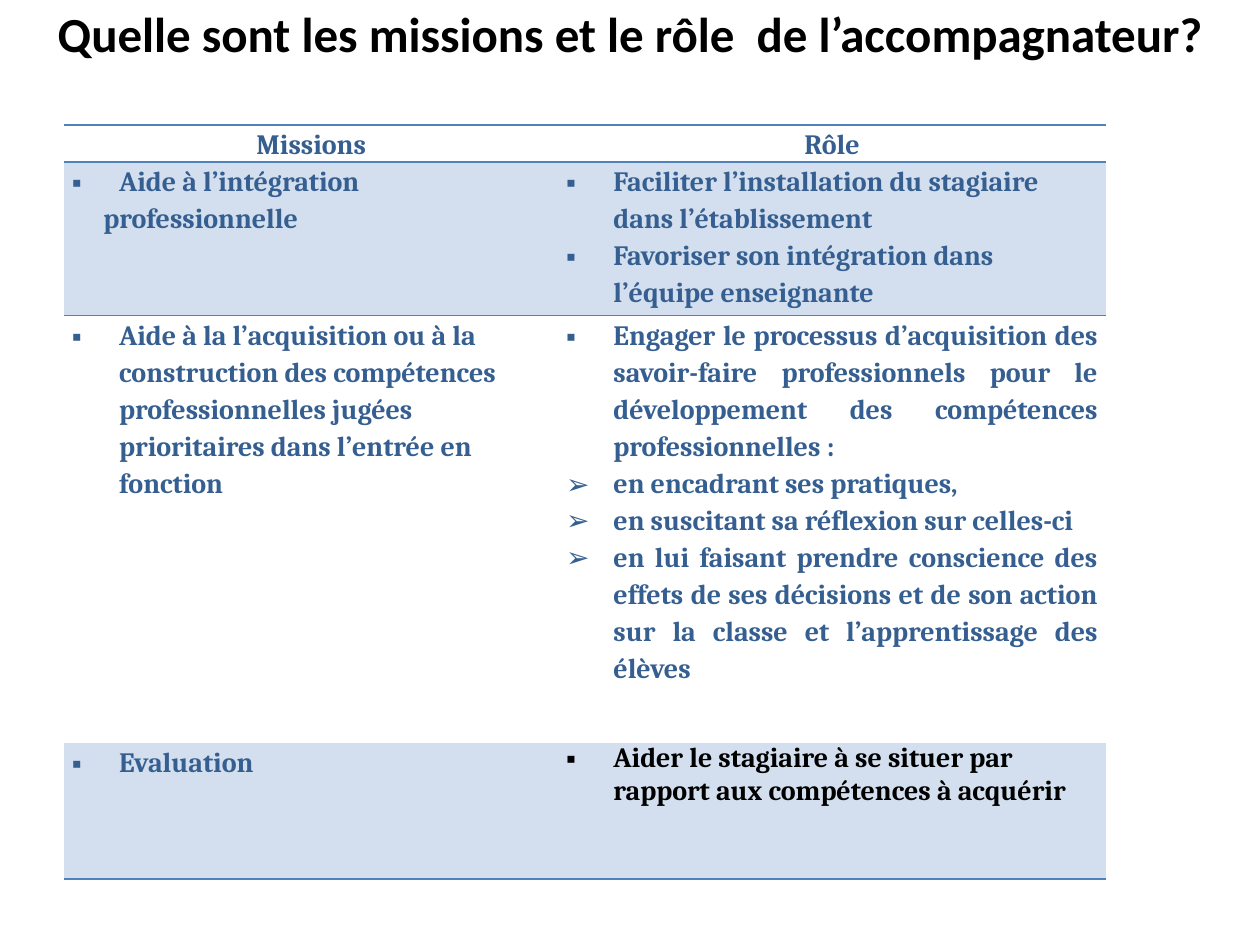
from dataclasses import dataclass

from lxml import etree
from pptx import Presentation
from pptx.dml.color import RGBColor
from pptx.enum.text import MSO_ANCHOR, PP_ALIGN
from pptx.oxml.ns import qn
from pptx.util import Pt

LEFT, CENTER, JUSTIFY = PP_ALIGN.LEFT, PP_ALIGN.CENTER, PP_ALIGN.JUSTIFY
TOP = MSO_ANCHOR.TOP
NO_TABLE_STYLE = "{2D5ABB26-0587-4C30-8999-92F81FD0307C}"
SQUARE, ARROW = "▪", "➢"


@dataclass(frozen=True)
class Theme:
    black: str = "000000"
    text: str = "365F91"
    line: str = "4F81BD"
    band: str = "D3DFEE"
    title_font: str = "Calibri"
    body_font: str = "Cambria"
    title_size: float = 28
    body_size: float = 16
    hang: float = 27
    line_width: float = 1


@dataclass(frozen=True)
class Para:
    text: str
    bullet: str = ""
    align: int = LEFT
    indent: float = 0
    spacing: float = 1.15
    color: str = Theme.text


class Builder:
    def __init__(self, prs, theme):
        self.theme = theme
        self.s = prs.slides.add_slide(prs.slide_layouts[6])

    def add_text(self, p, text, font, size, color):
        r = p.add_run()
        r.text = text
        for name, value in {"name": font, "size": Pt(size), "bold": True}.items():
            setattr(r.font, name, value)
        r.font.color.rgb = RGBColor.from_string(color)

    def title(self, text, x, y, w, h):
        tf = self.s.shapes.add_textbox(Pt(x), Pt(y), Pt(w), Pt(h)).text_frame
        for name, value in {"word_wrap": True, "vertical_anchor": TOP}.items():
            setattr(tf, name, value)
        p = tf.paragraphs[0]
        p.alignment = CENTER
        t = self.theme
        self.add_text(p, text, t.title_font, t.title_size, t.black)

    def paragraph(self, p, para):
        t = self.theme
        p.alignment, p.line_spacing = para.align, para.spacing
        pPr = p._p.get_or_add_pPr()
        hang = t.hang if para.bullet else 0
        pPr.set("marL", str(Pt(para.indent + hang)))
        pPr.set("indent", str(Pt(-hang)))
        if para.bullet:
            etree.SubElement(pPr, qn("a:buFont")).set("typeface", "Arial")
            etree.SubElement(pPr, qn("a:buChar")).set("char", para.bullet)
        self.add_text(p, para.text, t.body_font, t.body_size, para.color)

    def border(self, cell, side):
        ln = etree.Element(qn(f"a:ln{side}"), w=str(Pt(self.theme.line_width)))
        fill = etree.SubElement(ln, qn("a:solidFill"))
        etree.SubElement(fill, qn("a:srgbClr")).set("val", self.theme.line)
        cell._tc.get_or_add_tcPr().insert(0, ln)

    def cell(self, cell, paras, band, sides):
        margins = {"margin_left": 4.5, "margin_right": 4.5,
                   "margin_top": 0, "margin_bottom": 0}
        for name, value in margins.items():
            setattr(cell, name, Pt(value))
        if band:
            cell.fill.solid()
            cell.fill.fore_color.rgb = RGBColor.from_string(self.theme.band)
        else:
            cell.fill.background()
        # Borders go in front of the fill, top before bottom
        for side in reversed(sides):
            self.border(cell, side)
        tf = cell.text_frame
        for i, para in enumerate(paras):
            self.paragraph(tf.add_paragraph() if i else tf.paragraphs[0], para)

    def table(self, rows, x, y, widths, heights, borders):
        frame = self.s.shapes.add_table(len(rows), len(widths), Pt(x), Pt(y),
                                        Pt(sum(widths)), Pt(sum(heights)))
        tbl = frame.table
        tbl._tbl.tblPr.find(qn("a:tableStyleId")).text = NO_TABLE_STYLE
        for column, width in zip(tbl.columns, widths):
            column.width = Pt(width)
        for i, (row, height) in enumerate(zip(rows, heights)):
            tbl.rows[i].height = Pt(height)
            for j, paras in enumerate(row):
                self.cell(tbl.cell(i, j), paras, i % 2 == 1, borders[i])


ROWS = [
    # Header
    ([Para("Missions", align=CENTER)], [Para("Rôle", align=CENTER)]),
    # Integration
    ([Para("Aide à l’intégration", SQUARE),
      Para("professionnelle", indent=18)],
     [Para("Faciliter l’installation du stagiaire dans l’établissement", SQUARE),
      Para("Favoriser son intégration dans l’équipe enseignante", SQUARE)]),
    # Skills
    ([Para("Aide à la l’acquisition ou à la construction des compétences "
           "professionnelles jugées prioritaires dans l’entrée en fonction", SQUARE)],
     [Para("Engager le processus d’acquisition des savoir-faire professionnels pour "
           "le développement des compétences professionnelles :", SQUARE, JUSTIFY),
      Para("en encadrant ses pratiques, ", ARROW, JUSTIFY),
      Para("en suscitant sa réflexion sur celles-ci ", ARROW, JUSTIFY),
      Para("en lui faisant prendre conscience des effets de ses décisions et de son "
           "action sur la classe et l’apprentissage des élèves", ARROW, JUSTIFY)]),
    # Assessment
    ([Para("Evaluation", SQUARE)],
     [Para("Aider le stagiaire à se situer par rapport aux compétences à acquérir",
           SQUARE, spacing=1.0, color=Theme.black)]),
]


def main():
    prs = Presentation()
    prs.slide_width, prs.slide_height = Pt(720), Pt(540)
    b = Builder(prs, Theme())
    b.table(ROWS, 36.6, 71.3, widths=[282.5, 312.8],
            heights=[21, 88, 244, 78], borders=["TB", "T", "", "B"])
    b.title("Quelle sont les missions et le rôle  de l’accompagnateur?",
            0, -1.5, 720, 75)
    prs.save("out.pptx")


if __name__ == "__main__":
    main()
